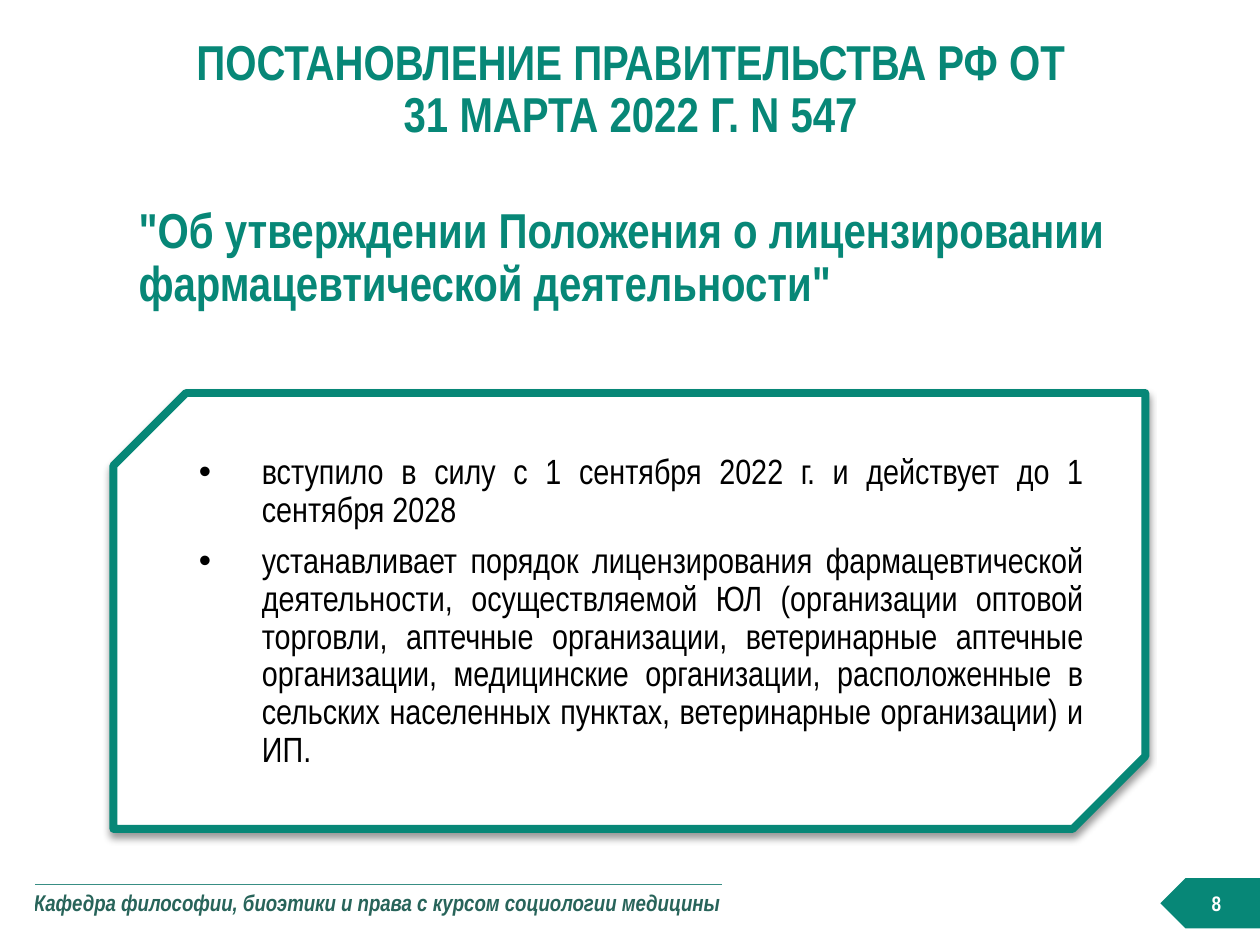
from lxml import etree
from pptx import Presentation
from pptx.dml.color import RGBColor
from pptx.enum.shapes import MSO_SHAPE
from pptx.enum.text import MSO_ANCHOR, MSO_AUTO_SIZE, PP_ALIGN
from pptx.oxml import parse_xml
from pptx.oxml.ns import nsdecls, qn
from pptx.util import Pt

SNIPPED, PENTAGON = MSO_SHAPE.SNIP_2_DIAG_RECTANGLE, MSO_SHAPE.PENTAGON
TOP, MIDDLE = MSO_ANCHOR.TOP, MSO_ANCHOR.MIDDLE
LEFT, CENTER, JUSTIFY = PP_ALIGN.LEFT, PP_ALIGN.CENTER, PP_ALIGN.JUSTIFY
NO_AUTOFIT = MSO_AUTO_SIZE.NONE

# Content
TITLE = "ПОСТАНОВЛЕНИЕ ПРАВИТЕЛЬСТВА РФ ОТ 31 МАРТА 2022 Г. N 547"
SUBTITLE = '"Об утверждении Положения о лицензировании фармацевтической деятельности"'
POINTS = [
    "вступило в силу с 1 сентября 2022 г. и действует до 1 сентября 2028",
    "устанавливает порядок лицензирования фармацевтической деятельности, "
    "осуществляемой ЮЛ (организации оптовой торговли, аптечные организации, "
    "ветеринарные аптечные организации, медицинские организации, расположенные "
    "в сельских населенных пунктах, ветеринарные организации) и ИП.",
]
FOOTER = "Кафедра философии, биоэтики и права с курсом социологии медицины"
PAGE_NUMBER = "8"

THEME = {
    "font": "Arial Narrow",
    "accent": "078777", "footer": "28645A", "rule": "388E84",
    "text": "000000", "paper": "FFFFFF",
    "heading_size": 28, "body_size": 20, "footer_size": 13, "number_size": 12,
}

# Boxes in points: left, top, width, height
SLIDE_SIZE = (720, 540)
TITLE_BOX = (100, 26.6, 520.6, 50.4)
SUBTITLE_BOX = (64.8, 111.6, 583.9, 73.4)
BODY_BOX = (64.8, 224.6, 589.7, 249.1)
NUMBER_BOX = (663.1, 501.8, 56.9, 28.8)
FOOTER_BOX = (19.4, 505.4, 393.8, 31)


def points(values):
    return [Pt(value) for value in values]


def color(name):
    return RGBColor.from_string(THEME[name])


def write(frame, paragraphs, *, size, ink, bold=False, italic=False, align=LEFT,
          anchor=TOP, insets=(0, 0, 0, 0), line_spacing=None, gap=0, bullet=None):
    frame.word_wrap = True
    frame.auto_size = NO_AUTOFIT
    frame.vertical_anchor = anchor
    (frame.margin_left, frame.margin_top,
     frame.margin_right, frame.margin_bottom) = points(insets)
    for index, text in enumerate(paragraphs):
        paragraph = frame.add_paragraph() if index else frame.paragraphs[0]
        paragraph.alignment = align
        paragraph.line_spacing = line_spacing
        paragraph.space_before = Pt(gap if index else 0)
        if bullet:
            properties = paragraph._p.get_or_add_pPr()
            properties.set("marL", str(Pt(49.7)))
            properties.set("indent", str(Pt(-36)))
            font = etree.SubElement(properties, qn("a:buFont"))
            font.set("typeface", "Arial")
            etree.SubElement(properties, qn("a:buChar")).set("char", bullet)
        style_run(paragraph, text, size, ink, bold, italic)


def style_run(paragraph, text, size, ink, bold, italic):
    run = paragraph.add_run()
    run.text = text
    run.font.name = THEME["font"]
    run.font.size = Pt(THEME[size])
    run.font.bold, run.font.italic = bold, italic
    run.font.color.rgb = color(ink)


def add_flipped_shape(slide, kind, box, fill):
    shape = slide.shapes.add_shape(kind, *points(box))
    shape._element.spPr.find(qn("a:xfrm")).set("flipH", "1")
    shape.shadow.inherit = False
    shape.fill.solid()
    shape.fill.fore_color.rgb = color(fill)
    shape.line.fill.background()
    return shape


def add_shadow(shape):
    effects = shape._element.spPr.find(qn("a:effectLst"))
    effects.append(parse_xml(
        f'<a:outerShdw {nsdecls("a")} blurRad="{Pt(4)}" dist="{Pt(3)}" dir="5400000" '
        'rotWithShape="0"><a:srgbClr val="000000"><a:alpha val="40000"/>'
        '</a:srgbClr></a:outerShdw>'))


def add_footer(slide):
    table = slide.shapes.add_table(1, 1, *points(FOOTER_BOX)).table
    table.first_row = table.horz_banding = False
    cell = table.cell(0, 0)
    cell.fill.background()
    (cell.margin_left, cell.margin_top,
     cell.margin_right, cell.margin_bottom) = points((0, 5.8, 0, 0))
    style_run(cell.text_frame.paragraphs[0], FOOTER, "footer_size", "footer", True, True)
    # Rule above the footer; borders come before the fill in the cell properties
    cell._tc.get_or_add_tcPr().insert(0, parse_xml(
        f'<a:lnT {nsdecls("a")} w="{Pt(1)}"><a:solidFill>'
        f'<a:srgbClr val="{THEME["rule"]}"/></a:solidFill></a:lnT>'))


def main():
    presentation = Presentation()
    presentation.slide_width, presentation.slide_height = points(SLIDE_SIZE)
    slide = presentation.slides.add_slide(presentation.slide_layouts[5])

    add_footer(slide)

    # Framed list
    body = add_flipped_shape(slide, SNIPPED, BODY_BOX, "paper")
    body.line.color.rgb = color("accent")
    body.line.width = Pt(4.5)
    add_shadow(body)
    write(body.text_frame, POINTS, size="body_size", ink="text", align=JUSTIFY,
          insets=(14.4,) * 4, line_spacing=0.9, gap=7.5, bullet="•")

    # Page number tab
    tab = add_flipped_shape(slide, PENTAGON, NUMBER_BOX, "accent")
    write(tab.text_frame, [PAGE_NUMBER], size="number_size", ink="paper", bold=True,
          align=CENTER, anchor=MIDDLE, insets=(7.2, 3.6, 7.2, 3.6))

    # Headings
    heading = dict(size="heading_size", ink="accent", bold=True, anchor=MIDDLE,
                   line_spacing=0.9)
    title = slide.shapes.title
    title.left, title.top, title.width, title.height = points(TITLE_BOX)
    write(title.text_frame, [TITLE], align=CENTER, **heading)
    subtitle = slide.shapes.add_textbox(*points(SUBTITLE_BOX))
    write(subtitle.text_frame, [SUBTITLE], insets=(14.4, 2.9, 2.9, 2.9), **heading)

    presentation.save("out.pptx")


if __name__ == "__main__":
    main()
